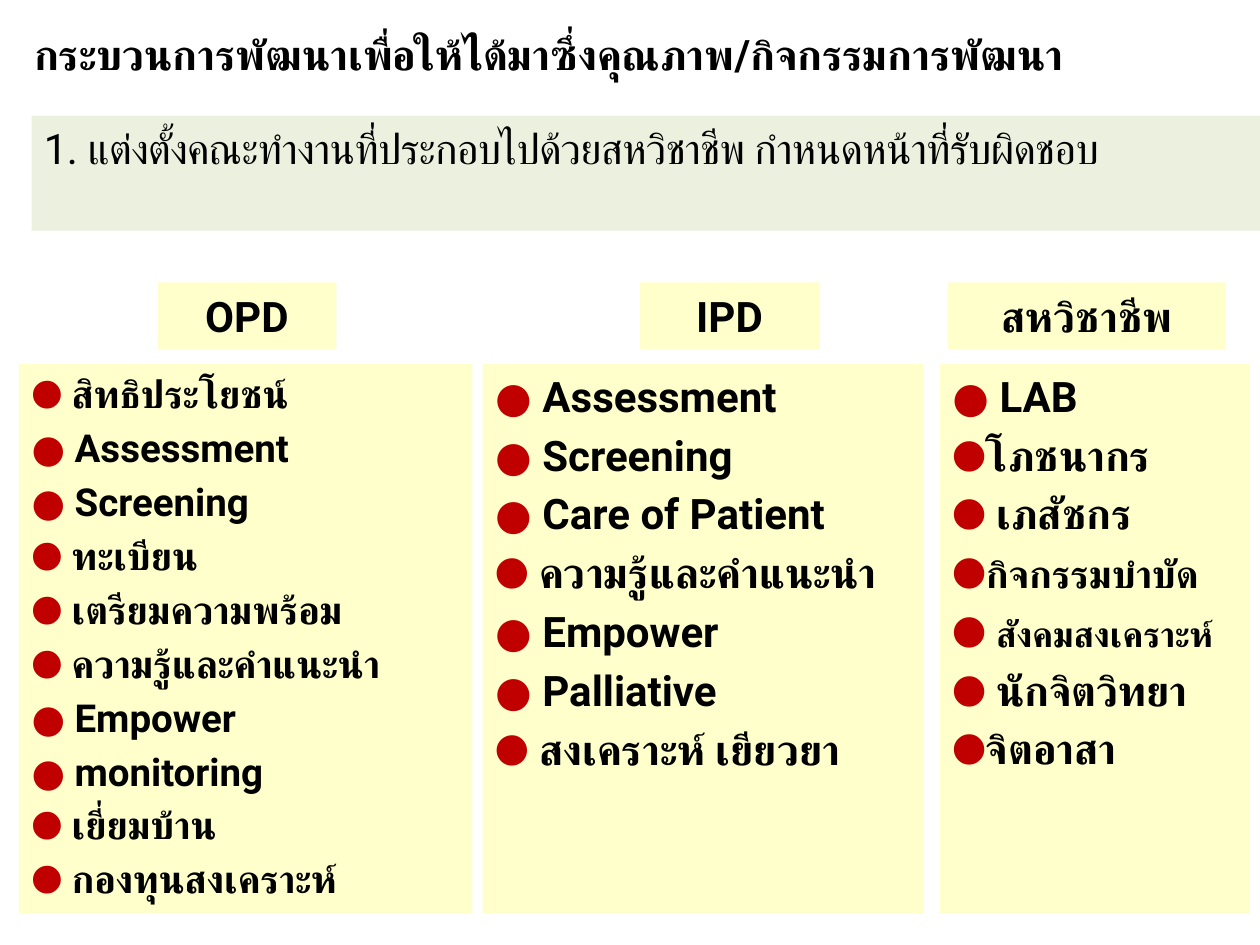
from lxml import etree
from pptx import Presentation
from pptx import util as u
from pptx.dml.color import RGBColor
from pptx.enum import shapes, text
from pptx.oxml.ns import qn

RED, CREAM, SAGE = "C00000", "FFFFCC", "EBF1DE"
LIST_TOP, LIST_H = 38.53, 58.13
HEAD_TOP, HEAD_H = 29.87, 7.07


def color(value):
    return RGBColor.from_string(value)


def write(p, content, size=24, ink="000000", bold=True, spacing=None):
    r = p.add_run()
    r.text = content
    r.font.name = "Roboto"
    r.font.size = u.Pt(size)
    r.font.bold = bold
    r.font.color.rgb = color(ink)
    rPr = r._r.get_or_add_rPr()
    etree.SubElement(rPr, qn("a:cs")).set("typeface", "Roboto")
    if spacing:
        rPr.set("spc", str(spacing))


def plain_paragraph(p, align, before):
    p.alignment = align
    pPr = p._p.get_or_add_pPr()
    pPr.set("marL", "0")
    pPr.set("indent", "0")
    gap = etree.SubElement(pPr, qn("a:spcBef"))
    etree.SubElement(gap, qn("a:spcPct")).set("val", str(before * 1000))
    etree.SubElement(pPr, qn("a:buNone"))


class Deck:
    def __init__(self, layout):
        self.prs = Presentation()
        self.prs.slide_width, self.prs.slide_height = u.Inches(10), u.Inches(7.5)
        self.s = self.prs.slides.add_slide(self.prs.slide_layouts[layout])

    def place(self, sp, x, y, w, h, fill=None, anchor=text.MSO_ANCHOR.TOP):
        W, H = self.prs.slide_width, self.prs.slide_height
        sp.left, sp.top = int(W * x / 100), int(H * y / 100)
        sp.width, sp.height = int(W * w / 100), int(H * h / 100)
        if fill:
            sp.fill.solid()
            sp.fill.fore_color.rgb = color(fill)
            sp.line.fill.background()
        tf = sp.text_frame
        tf.word_wrap = True
        tf.auto_size = text.MSO_AUTO_SIZE.NONE
        tf.vertical_anchor = anchor
        return tf

    def box(self, holder=None):
        if holder is not None:
            return self.s.placeholders[holder]
        sp = self.s.shapes.add_shape(shapes.MSO_SHAPE.RECTANGLE, 0, 0, 1, 1)
        sp.shadow.inherit = False
        return sp

    def title(self, content, *at):
        p = self.place(self.s.shapes.title, *at).paragraphs[0]
        plain_paragraph(p, text.PP_ALIGN.LEFT, 0)
        write(p, content)

    def band(self, content, *at):
        p = self.place(self.box(), *at, fill=SAGE).paragraphs[0]
        plain_paragraph(p, text.PP_ALIGN.LEFT, 0)
        write(p, content, bold=False, spacing=-30)

    def heading(self, content, x, w, holder=None):
        tf = self.place(self.box(holder), x, HEAD_TOP, w, HEAD_H, CREAM,
                        text.MSO_ANCHOR.MIDDLE)
        plain_paragraph(tf.paragraphs[0], text.PP_ALIGN.CENTER, 20)
        write(tf.paragraphs[0], content)

    def dot_list(self, items, x, w, size=24, holder=None):
        tf = self.place(self.box(holder), x, LIST_TOP, w, LIST_H, CREAM)
        for i, item in enumerate(items):
            dot, label, label_size = item if isinstance(item, tuple) else ("● ", item, size)
            p = tf.add_paragraph() if i else tf.paragraphs[0]
            plain_paragraph(p, text.PP_ALIGN.LEFT, 20)
            write(p, dot, size, RED)
            write(p, label, label_size)


def main():
    deck = Deck(layout=4)
    deck.title("กระบวนการพัฒนาเพื่อให้ได้มาซึ่งคุณภาพ/กิจกรรมการพัฒนา", 1.7, 2.4, 95.6, 6.67)
    deck.band("1. แต่งตั้งคณะทำงานที่ประกอบไปด้วยสหวิชาชีพ กำหนดหน้าที่รับผิดชอบ",
              2.5, 12.27, 97.5, 12.13)

    deck.heading("OPD", 12.5, 14.2, holder=1)
    deck.dot_list(["สิทธิประโยชน์", "Assessment", "Screening", "ทะเบียน",
                   "เตรียมความพร้อม", "ความรู้และคำแนะนำ", "Empower",
                   "monitoring", "เยี่ยมบ้าน", "กองทุนสงเคราะห์"],
                  1.5, 36, size=22, holder=2)

    deck.heading("IPD", 50.8, 14.2, holder=3)
    deck.dot_list(["Assessment", "Screening", "Care of Patient", "ความรู้และคำแนะนำ",
                   "Empower", "Palliative", "สงเคราะห์ เยียวยา"],
                  38.3, 35, holder=4)

    deck.heading("สหวิชาชีพ", 75.2, 22.1)
    deck.dot_list(["LAB", ("●", "โภชนากร", 24), "เภสัชกร", ("●", "กิจกรรมบำบัด", 22),
                   ("● ", "สังคมสงเคราะห์", 20), "นักจิตวิทยา", ("●", "จิตอาสา", 24)],
                  74.6, 24.6)
    deck.prs.save("out.pptx")


if __name__ == "__main__":
    main()
